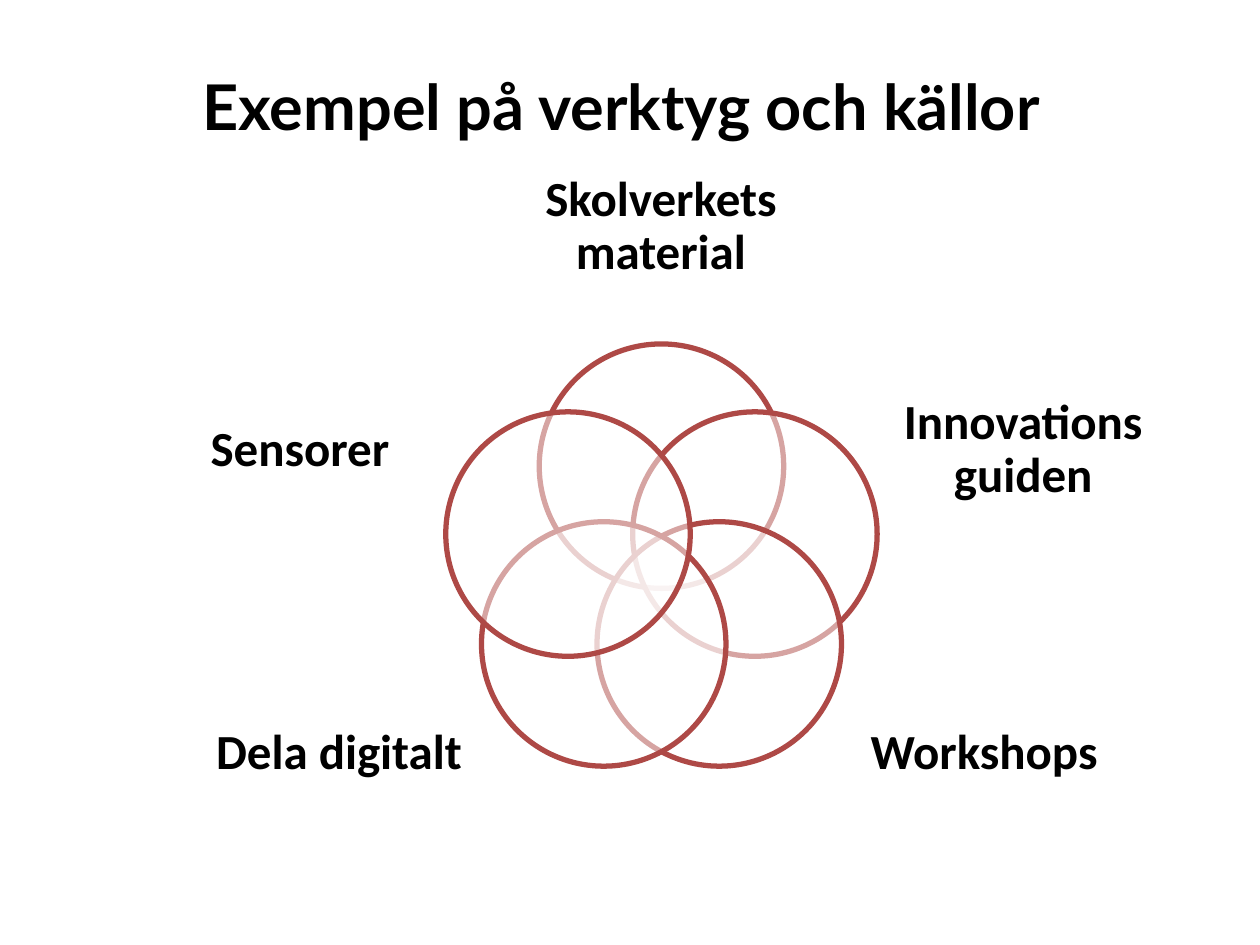
from math import cos, pi, sin

from lxml import etree
from pptx import Presentation
from pptx.dml.color import RGBColor
from pptx.enum.shapes import MSO_SHAPE
from pptx.enum.text import MSO_ANCHOR, PP_ALIGN
from pptx.oxml.ns import qn
from pptx.util import Inches, Pt

BLACK = RGBColor(0x00, 0x00, 0x00)
WHITE = RGBColor(0xFF, 0xFF, 0xFF)
RED = RGBColor(0xAE, 0x49, 0x46)

CENTER_X, CENTER_Y = 5.25, 4.48
RING_RADIUS = 0.78
DIAMETER = 1.94

# Clockwise from the top: text, left, top, width, height
LABELS = [
    ("Skolverkets material", 4.12, 1.15, 2.25, 1.3),
    ("Innovationsguiden", 7.11, 2.87, 2.02, 1.41),
    ("Workshops", 6.8, 5.28, 2.02, 1.41),
    ("Dela digitalt", 1.68, 5.28, 2.02, 1.41),
    ("Sensorer", 1.37, 2.87, 2.02, 1.41),
]


def format_text(frame, text, font_name, size):
    """Fill a frame with one bold, centred paragraph and return it."""
    frame.word_wrap = True
    frame.vertical_anchor = MSO_ANCHOR.MIDDLE
    paragraph = frame.paragraphs[0]
    paragraph.text = text
    paragraph.alignment = PP_ALIGN.CENTER
    paragraph.font.name = font_name
    paragraph.font.size = Pt(size)
    paragraph.font.bold = True
    paragraph.font.color.rgb = BLACK
    return paragraph


presentation = Presentation()
presentation.slide_width = Inches(10)
presentation.slide_height = Inches(7.5)
slide = presentation.slides.add_slide(presentation.slide_layouts[5])

title = slide.shapes.title
title.left, title.top = Inches(0.43), Inches(0.21)
title.width, title.height = Inches(9), Inches(1.25)
format_text(title.text_frame, "Exempel på verktyg och källor", "Lato", 36)

venn = slide.shapes.add_group_shape()
for index, (text, left, top, width, height) in enumerate(LABELS):
    angle = 2 * pi * index / len(LABELS)
    circle_left = CENTER_X + RING_RADIUS * sin(angle) - DIAMETER / 2
    circle_top = CENTER_Y - RING_RADIUS * cos(angle) - DIAMETER / 2
    circle = venn.shapes.add_shape(
        MSO_SHAPE.OVAL, Inches(circle_left), Inches(circle_top),
        Inches(DIAMETER), Inches(DIAMETER))
    circle.shadow.inherit = False
    circle.fill.solid()
    circle.fill.fore_color.rgb = WHITE
    color = circle.fill._xPr.find(qn("a:solidFill"))[0]
    etree.SubElement(color, qn("a:alpha"), val="50000")
    circle.line.color.rgb = RED
    circle.line.width = Pt(3)

    label = venn.shapes.add_textbox(
        Inches(left), Inches(top), Inches(width), Inches(height))
    frame = label.text_frame
    frame.margin_left = frame.margin_right = 0
    frame.margin_top = frame.margin_bottom = 0
    paragraph = format_text(frame, text, "Calibri", 28)
    paragraph.line_spacing = 0.9

presentation.save("out.pptx")
